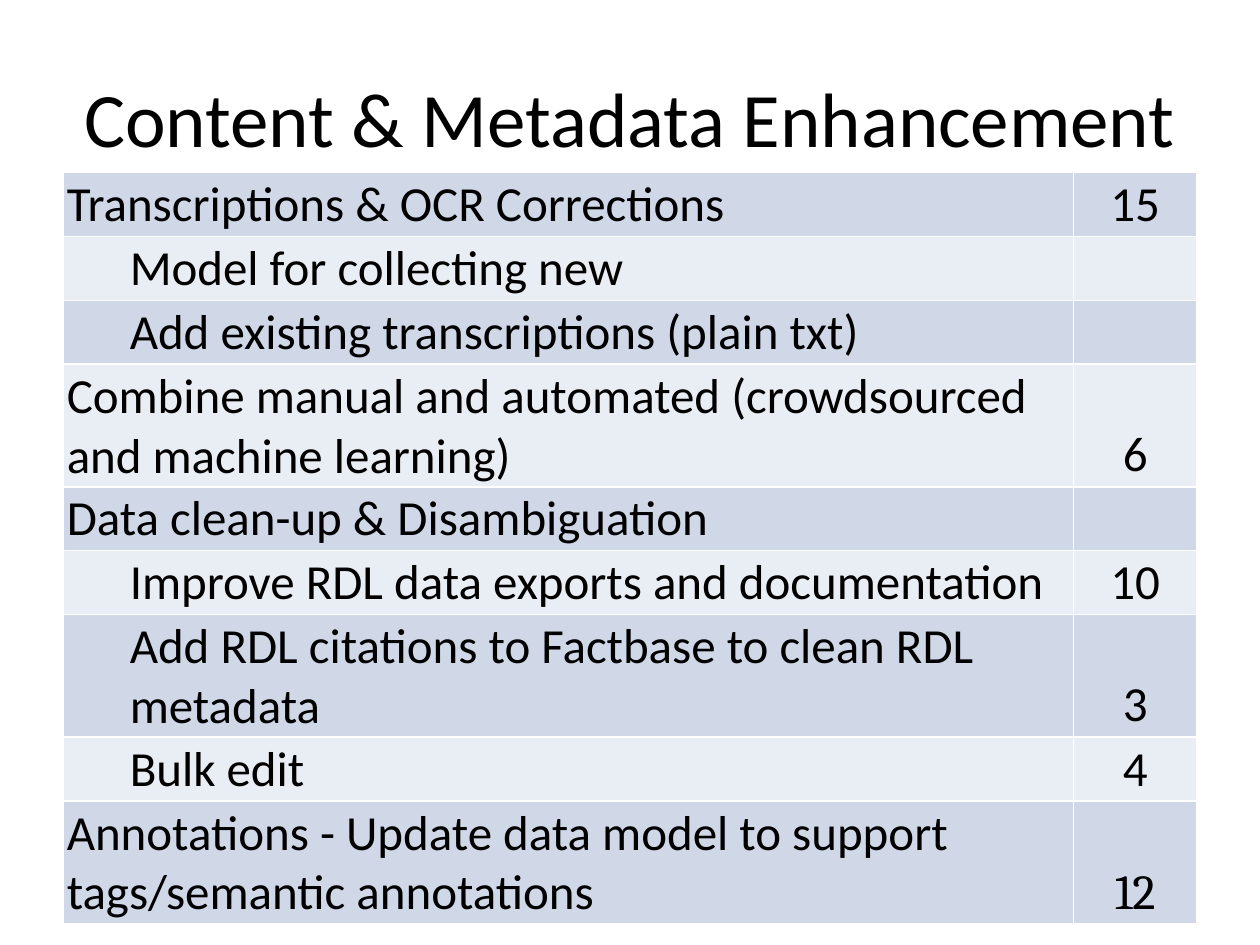
from lxml.etree import SubElement
from pptx import Presentation
from pptx.dml.color import RGBColor
from pptx.enum.text import MSO_ANCHOR as Anchor, PP_ALIGN as Align
from pptx.oxml.ns import qn
from pptx.util import Inches, Pt

BLACK = RGBColor(0x00, 0x00, 0x00)
WHITE = RGBColor(0xFF, 0xFF, 0xFF)
BANDS = (RGBColor(0xD0, 0xD8, 0xE8), RGBColor(0xE9, 0xED, 0xF4))

# Topic, indent level, votes, font of the votes
TOPICS = [
    ("Transcriptions & OCR Corrections", 0, "15", "Calibri"),
    ("Model for collecting new", 1, "", "Calibri"),
    ("Add existing transcriptions (plain txt)", 1, "", "Calibri"),
    ("Combine manual and automated (crowdsourced and machine learning)", 0, "6", "Calibri"),
    ("Data clean-up & Disambiguation", 0, "", "Calibri"),
    ("Improve RDL data exports and documentation", 1, "10", "Calibri"),
    ("Add RDL citations to Factbase to clean RDL metadata", 1, "3", "Calibri"),
    ("Bulk edit", 1, "4", "Calibri"),
    ("Annotations - Update data model to support tags/semantic annotations", 0, "12", "Cambria"),
]


def apply(target, formats):
    for name, value in formats.items():
        setattr(target, name, value)


class SlideBuilder:
    """Holds the text style and the current slide."""

    font = {"name": "Calibri", "size": Pt(28)}
    cell_format = {
        "vertical_anchor": Anchor.BOTTOM,
        "margin_left": Inches(0.03), "margin_right": Inches(0.03),
        "margin_top": Inches(0.02), "margin_bottom": Inches(0.02),
    }

    def __init__(self, page):
        self.page = page

    def add_text(self, para, text, align, **font):
        para.alignment = align
        span = para.add_run()
        span.text = text
        apply(span.font, {**self.font, **font})
        span.font.color.rgb = BLACK

    def title(self, text, left, top, width, height):
        box = self.page.shapes.add_textbox(
            Inches(left), Inches(top), Inches(width), Inches(height))
        apply(box.text_frame, {"word_wrap": True, "vertical_anchor": Anchor.MIDDLE})
        self.add_text(box.text_frame.paragraphs[0], text, Align.CENTER, size=Pt(44))

    def borders(self, cell):
        properties = cell._tc.get_or_add_tcPr()
        for side in ("a:lnL", "a:lnR", "a:lnT", "a:lnB"):
            line = SubElement(properties, qn(side), w=str(Pt(1)))
            fill = SubElement(line, qn("a:solidFill"))
            SubElement(fill, qn("a:srgbClr"), val=str(WHITE))

    def cell(self, cell, text, band, align, level=0, **font):
        self.borders(cell)
        cell.fill.solid()
        cell.fill.fore_color.rgb = band
        if not text:
            return
        apply(cell, self.cell_format)
        para = cell.text_frame.paragraphs[0]
        self.add_text(para, text, align, **font)
        if level:
            para.level = level
            indent = para._p.get_or_add_pPr()
            indent.set("marL", str(Inches(0.5 * level)))
            indent.set("indent", "0")

    def table(self, topics, left, top, widths, row_height):
        table = self.page.shapes.add_table(
            len(topics), len(widths), Inches(left), Inches(top),
            Inches(sum(widths)), Inches(row_height * len(topics))).table
        apply(table, {"first_row": False, "horz_banding": False})
        for column, width in zip(table.columns, widths):
            column.width = Inches(width)
        for index, (topic, level, votes, votes_font) in enumerate(topics):
            table.rows[index].height = Inches(row_height)
            band = BANDS[index % 2]
            self.cell(table.cell(index, 0), topic, band, Align.LEFT, level)
            self.cell(table.cell(index, 1), votes, band, Align.CENTER, name=votes_font)


def main():
    deck = Presentation()
    apply(deck, {"slide_width": Inches(10), "slide_height": Inches(7.5)})
    builder = SlideBuilder(deck.slides.add_slide(deck.slide_layouts[6]))

    # Heading
    builder.title("Content & Metadata Enhancement", 0.5, 0.3, 9, 1.25)

    # Topics with their votes
    builder.table(TOPICS, 0.5, 1.37, (8.02, 0.98), 0.41)

    deck.save("out.pptx")


if __name__ == "__main__":
    main()
